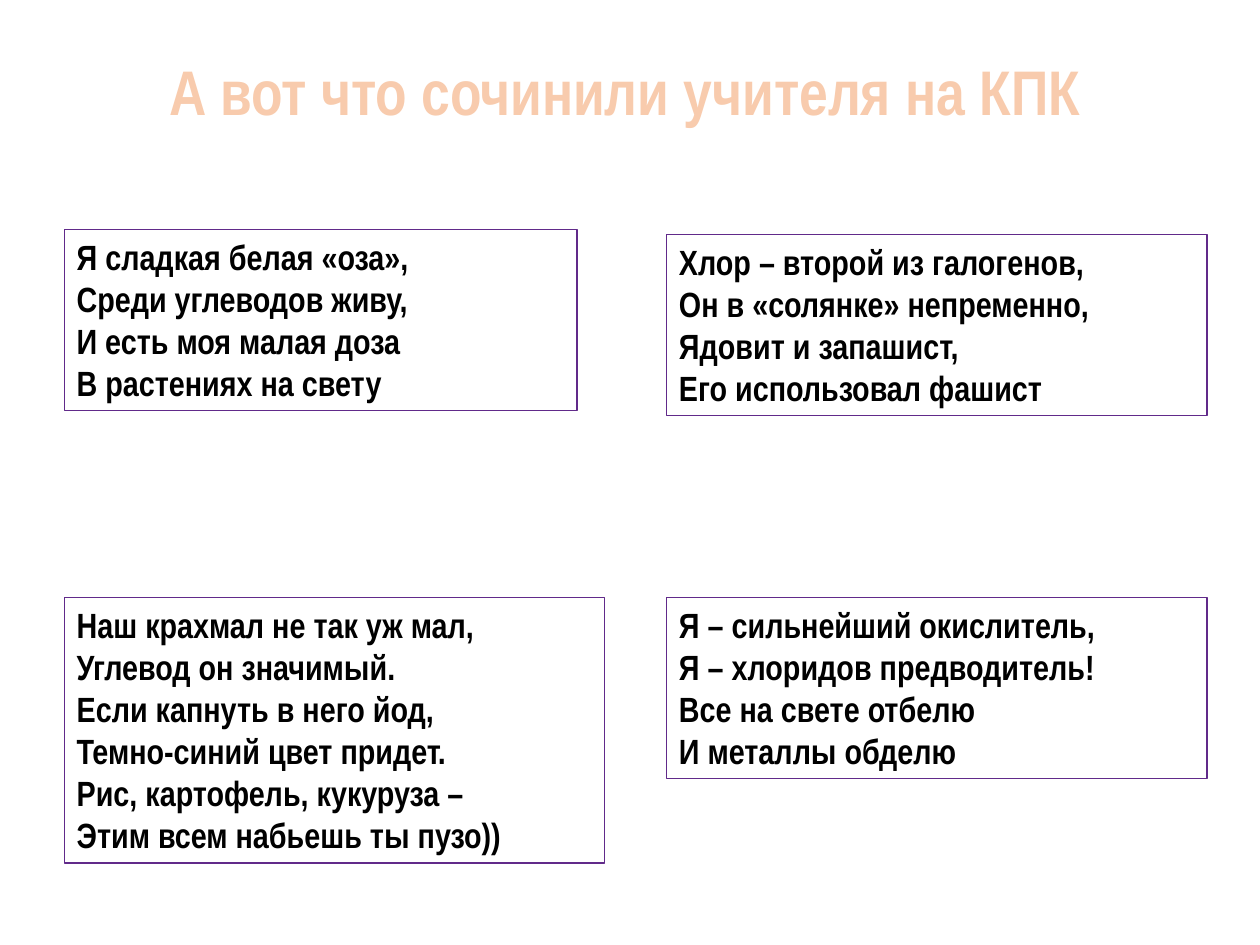
from dataclasses import dataclass

from lxml import etree
from pptx import Presentation
from pptx.dml.color import RGBColor
from pptx.enum.shapes import MSO_SHAPE
from pptx.enum.text import MSO_ANCHOR, MSO_AUTO_SIZE, PP_ALIGN
from pptx.oxml.ns import qn
from pptx.util import Inches, Pt

RECT = MSO_SHAPE.RECTANGLE
TOP = MSO_ANCHOR.TOP
GROW = MSO_AUTO_SIZE.SHAPE_TO_FIT_TEXT
LEFT, CENTER = PP_ALIGN.LEFT, PP_ALIGN.CENTER


@dataclass
class Theme:
    font: str = "Arial Narrow"
    peach: str = "F8CBAD"
    edge: str = "ED7D31"
    ink: str = "000000"
    frame: str = "612A8A"
    head: float = 36
    body: float = 20
    rule: float = 0.75
    trim: float = 1.75


theme = Theme()


def write(shape, text, size, color, align):
    frame = shape.text_frame
    frame.word_wrap = True
    frame.auto_size = GROW
    frame.vertical_anchor = TOP
    frame.text = text
    for para in frame.paragraphs:
        para.alignment = align
        for run in para.runs:
            run.font.name = theme.font
            run.font.size = Pt(size)
            run.font.bold = True
            run.font.color.rgb = RGBColor.from_string(color)


deck = Presentation()
deck.slide_width, deck.slide_height = Inches(10), Inches(7.5)
slide = deck.slides.add_slide(deck.slide_layouts[6])

title = slide.shapes.add_textbox(Inches(0.33), Inches(0.37), Inches(9.26), Inches(0.71))
write(title, "А вот что сочинили учителя на КПК", theme.head, theme.peach, CENTER)
props = title.text_frame.paragraphs[0].runs[0].font._element
line = etree.Element(qn("a:ln"), w=str(Pt(theme.trim)))
fill = etree.SubElement(line, qn("a:solidFill"))
etree.SubElement(fill, qn("a:srgbClr"), val=theme.edge)
props.insert(0, line)

cols = [0.51, 5.29]
rows = [1.82, 4.74]
wide = 4.29
pad, step = 0.1, 0.335

poems = [
    (0, 0, 0, 4.07, 4, """Я сладкая белая «оза»,
Среди углеводов живу,
И есть моя малая доза
В растениях на свету"""),
    (1, 0, 0.04, wide, 4, """Хлор – второй из галогенов,
Он в «солянке» непременно, Ядовит и запашист,
Его использовал фашист"""),
    (1, 1, 0, wide, 4, """Я – сильнейший окислитель,
Я – хлоридов предводитель!
Все на свете отбелю
И металлы обделю"""),
    (0, 1, 0, wide, 6, """Наш крахмал не так уж мал,
Углевод он значимый.
Если капнуть в него йод,
Темно-синий цвет придет.
Рис, картофель, кукуруза –
Этим всем набьешь ты пузо))"""),
]

for col, row, drop, width, count, verse in poems:
    box = slide.shapes.add_shape(
        RECT, Inches(cols[col]), Inches(rows[row] + drop),
        Inches(width), Inches(pad + count * step))
    box.shadow.inherit = False
    box.fill.background()
    box.line.color.rgb = RGBColor.from_string(theme.frame)
    box.line.width = Pt(theme.rule)
    write(box, verse, theme.body, theme.ink, LEFT)

deck.save("out.pptx")
